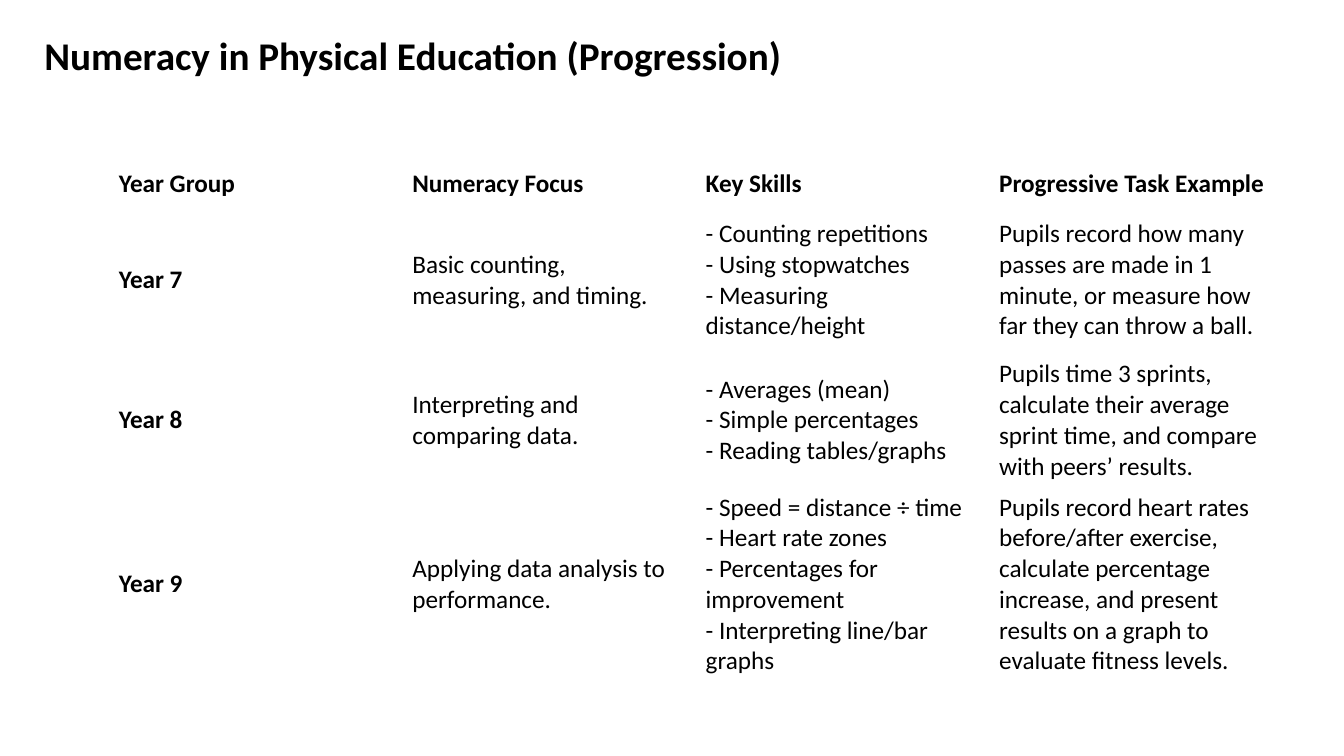
from dataclasses import dataclass

from pptx import Presentation
from pptx.dml.color import RGBColor
from pptx.enum.text import MSO_ANCHOR as Anchor, MSO_AUTO_SIZE as AutoSize, PP_ALIGN as Align
from pptx.slide import Slide
from pptx.text.text import TextFrame
from pptx.util import Inches, Pt

COLORS = {"text": "000000"}
FONT = "Calibri"
TITLE_ONLY = 5
COLUMN_WIDTH = 2.91


@dataclass
class TableRow:
    height: float
    year: str
    focus: str
    skills: list[str]
    task: str
    header: bool = False

    def texts(self) -> list[str]:
        return [self.year, self.focus, "\v".join(self.skills), self.task]


ROWS = [
    TableRow(0.45, "Year Group", "Numeracy Focus", ["Key Skills"],
             "Progressive Task Example", header=True),
    TableRow(1.46, "Year 7", "Basic counting, measuring, and timing.",
             ["- Counting repetitions", "- Using stopwatches",
              "- Measuring distance/height"],
             "Pupils record how many passes are made in 1 minute, "
             "or measure how far they can throw a ball."),
    TableRow(1.14, "Year 8", "Interpreting and comparing data.",
             ["- Averages (mean)", "- Simple percentages",
              "- Reading tables/graphs"],
             "Pupils time 3 sprints, calculate their average sprint time, "
             "and compare with peers’ results."),
    TableRow(1.83, "Year 9", "Applying data analysis to performance.",
             ["- Speed = distance ÷ time", "- Heart rate zones",
              "- Percentages for improvement",
              "- Interpreting line/bar graphs"],
             "Pupils record heart rates before/after exercise, calculate "
             "percentage increase, and present results on a graph to "
             "evaluate fitness levels."),
]


def write(tf: TextFrame, text: str, size: int, bold: bool) -> None:
    p = tf.paragraphs[0]
    p.text = text
    p.alignment = Align.LEFT
    p.font.name = FONT
    p.font.size = Pt(size)
    p.font.bold = bold
    p.font.color.rgb = RGBColor.from_string(COLORS["text"])


def add_title(s: Slide, text: str) -> None:
    sp = s.shapes.title
    sp.left, sp.top = Inches(0.34), Inches(0.26)
    sp.width, sp.height = Inches(7.98), Inches(0.88)
    tf = sp.text_frame
    tf.word_wrap = True
    tf.auto_size = AutoSize.NONE
    tf.vertical_anchor = Anchor.TOP
    write(tf, text, 28, True)


def add_progression_table(s: Slide, rows: list[TableRow]) -> None:
    columns = len(rows[0].texts())
    table = s.shapes.add_table(
        len(rows), columns, Inches(1.08), Inches(1.6),
        Inches(COLUMN_WIDTH * columns), Inches(sum(row.height for row in rows))).table
    table.first_row = False
    table.horz_banding = False
    for column in table.columns:
        column.width = Inches(COLUMN_WIDTH)
    for r, row in enumerate(rows):
        table.rows[r].height = Inches(row.height)
        for c, text in enumerate(row.texts()):
            cell = table.cell(r, c)
            cell.fill.background()
            cell.vertical_anchor = Anchor.MIDDLE
            write(cell.text_frame, text, 18, row.header or c == 0)


def main() -> None:
    prs = Presentation()
    prs.slide_width, prs.slide_height = Inches(13.33), Inches(7.5)
    s = prs.slides.add_slide(prs.slide_layouts[TITLE_ONLY])

    # Title
    add_title(s, "Numeracy in Physical Education (Progression)")

    # Progression by year group
    add_progression_table(s, ROWS)

    prs.save("out.pptx")


if __name__ == "__main__":
    main()
